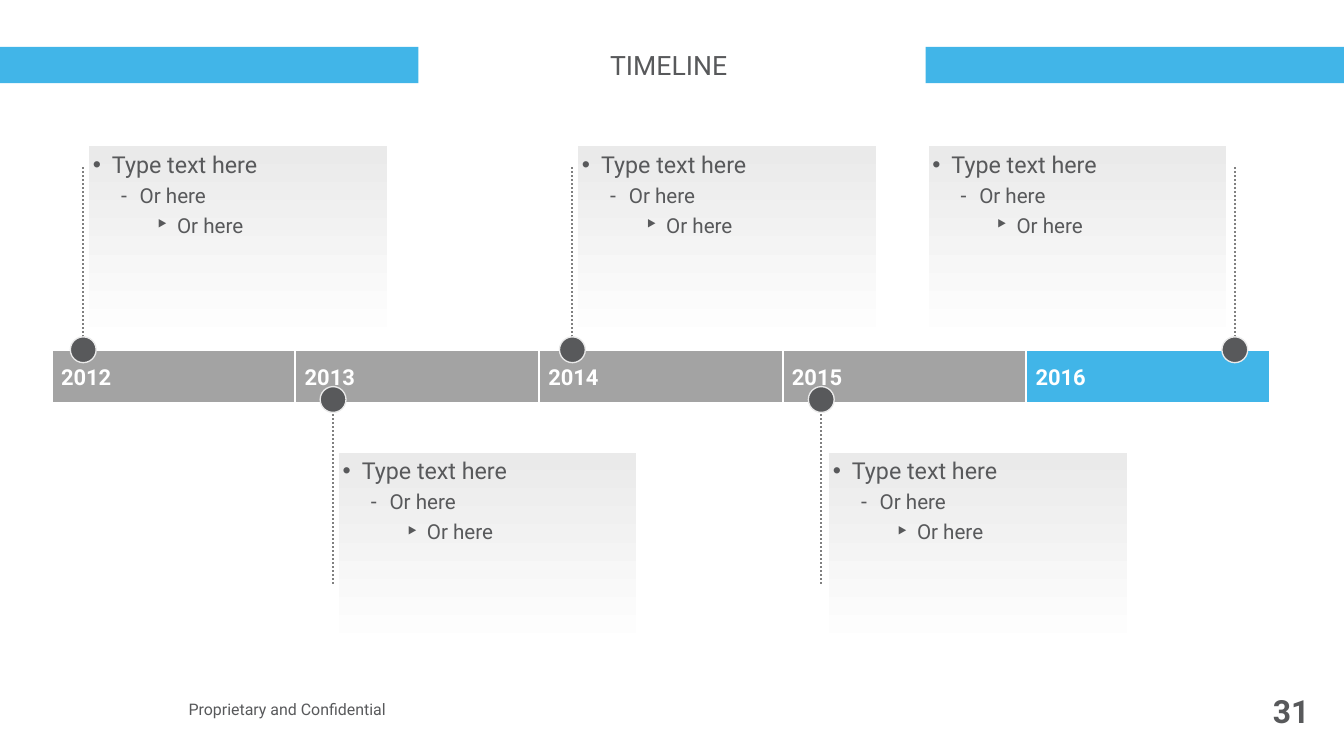
from lxml.etree import SubElement
from pptx import Presentation
from pptx.dml.color import RGBColor
from pptx.enum.dml import MSO_LINE
from pptx.enum.shapes import MSO_CONNECTOR, MSO_SHAPE
from pptx.enum.text import MSO_ANCHOR, PP_ALIGN
from pptx.oxml.ns import qn
from pptx.util import Inches, Pt

COLORS = {"blue": "41B5E8", "gray": "A3A3A3", "ink": "58595B",
          "pale": "EAEAEA", "white": "FFFFFF", "rule": "808080"}
YEARS = ["2012", "2013", "2014", "2015", "2016"]
UPPER = {"card": 1.52, "far": 1.75, "near": 3.52, "dot": 3.52}
LOWER = {"card": 4.72, "far": 6.11, "near": 4.33, "dot": 4.04}
EVENTS = [(0.87, 0.92, UPPER), (3.48, 3.53, LOWER), (5.98, 6.03, UPPER),
          (8.58, 8.65, LOWER), (12.9, 9.69, UPPER)]
CARD_WIDTH, CARD_HEIGHT, DOT = 3.13, 2.09, 0.27
LEVELS = [
    {"text": "Type text here", "size": 17.5, "before": 0, "left": 0.2,
     "hang": 0.2, "bullet": "•", "scale": 100},
    {"text": "Or here", "size": 15.5, "before": 3.7, "left": 0.49,
     "hang": 0.2, "bullet": "-", "scale": 100},
    {"text": "Or here", "size": 15.5, "before": 3.7, "left": 0.88,
     "hang": 0.21, "bullet": "‣", "scale": 140},
]


def rgb(name):
    """Return the colour with this name."""
    return RGBColor.from_string(COLORS[name])


def set_all(target, values):
    """Set every attribute listed in values on target."""
    for name, value in values.items():
        setattr(target, name, value)


def style_font(font, size, color="ink", bold=False):
    """Apply the slide's typeface to a font."""
    set_all(font, {"name": "Roboto", "size": Pt(size), "bold": bold})
    font.color.rgb = rgb(color)


def set_frame(frame, margins, anchor=MSO_ANCHOR.MIDDLE):
    """Set wrapping, anchor and the left, top, right, bottom margins."""
    sides = ("margin_left", "margin_top", "margin_right", "margin_bottom")
    set_all(frame, {"word_wrap": True, "vertical_anchor": anchor,
                    **dict(zip(sides, map(Inches, margins)))})


def write(frame, text, size, color="ink", bold=False, align=PP_ALIGN.LEFT):
    """Write one styled paragraph."""
    paragraph = frame.paragraphs[0]
    set_all(paragraph, {"text": text, "alignment": align})
    style_font(paragraph.font, size, color, bold)


def add_block(slide, kind, box, fill, line=None, width=1.5):
    """Add a preset shape with a plain fill and an optional outline."""
    block = slide.shapes.add_shape(kind, *map(Inches, box))
    block.shadow.inherit = False
    block.fill.solid()
    block.fill.fore_color.rgb = rgb(fill)
    if line:
        block.line.color.rgb = rgb(line)
        block.line.width = Pt(width)
    else:
        block.line.fill.background()
    return block


def add_label(slide, box, margin, text, size, **style):
    """Add a one-line text box."""
    frame = slide.shapes.add_textbox(*map(Inches, box)).text_frame
    set_frame(frame, [margin] * 4)
    write(frame, text, size, **style)


def add_stem(slide, x, start, end):
    """Add a dotted vertical line."""
    stem = slide.shapes.add_connector(
        MSO_CONNECTOR.STRAIGHT, *map(Inches, (x, start, x, end)))
    stem.line.color.rgb = rgb("rule")
    set_all(stem.line, {"width": Pt(1.5), "dash_style": MSO_LINE.ROUND_DOT})
    SubElement(stem.element.spPr, qn("a:effectLst"))


def add_bullets(slide, left, top):
    """Add the three-level list of an event."""
    box = map(Inches, (left, top, CARD_WIDTH, 1.03))
    frame = slide.shapes.add_textbox(*box).text_frame
    set_frame(frame, [0.05] * 4, MSO_ANCHOR.TOP)
    for number, level in enumerate(LEVELS):
        item = frame.add_paragraph() if number else frame.paragraphs[0]
        set_all(item, {"text": level["text"], "level": number})
        props = item._p.get_or_add_pPr()
        props.set("marL", str(Inches(level["left"])))
        props.set("indent", str(-Inches(level["hang"])))
        SubElement(props, qn("a:buSzPct"), val=str(level["scale"] * 1000))
        SubElement(props, qn("a:buFont"), typeface="Arial")
        SubElement(props, qn("a:buChar"), char=level["bullet"])
        item.space_before = Pt(level["before"])
        style_font(item.font, level["size"])


def add_event(slide, x, left, row):
    """Add an event: stem, fading card, list and dot."""
    add_stem(slide, x, row["near"], row["far"])
    card = add_block(slide, MSO_SHAPE.RECTANGLE,
                     (left, row["card"], CARD_WIDTH, CARD_HEIGHT),
                     "white", "white")
    card.fill.gradient()
    card.fill.gradient_angle = 270
    for stop, color in zip(card.fill.gradient_stops, ("pale", "white")):
        stop.color.rgb = rgb(color)
    add_bullets(slide, left, row["card"])
    add_block(slide, MSO_SHAPE.OVAL, (x - DOT / 2, row["dot"], DOT, DOT),
              "ink", "pale", 1)


def add_year(slide, index, year):
    """Add one year segment; the last is highlighted."""
    fill = "blue" if year == YEARS[-1] else "gray"
    box = (0.54 + index * 2.545, 3.66, 2.55, 0.55)
    segment = add_block(slide, MSO_SHAPE.RECTANGLE, box, fill, "white")
    set_frame(segment.text_frame, (0.1, 0.01, 0.01, 0.01))
    write(segment.text_frame, year, 16.5, "white", True)


def add_title(slide, text):
    """Place the title in front of the blue band."""
    add_block(slide, MSO_SHAPE.RECTANGLE, (0, 0.49, 14.04, 0.38), "blue")
    title = slide.shapes.title
    title.element.getparent().append(title.element)
    set_all(title, {"left": Inches(4.37), "top": Inches(0.41),
                    "width": Inches(5.3), "height": Inches(0.54)})
    title.fill.solid()
    title.fill.fore_color.rgb = rgb("white")
    set_frame(title.text_frame, [0.1] * 4)
    write(title.text_frame, text, 20, align=PP_ALIGN.CENTER)


def main():
    """Build the timeline slide."""
    deck = Presentation()
    set_all(deck, {"slide_width": Inches(14.04), "slide_height": Inches(7.9)})
    slide = deck.slides.add_slide(deck.slide_layouts[5])
    add_title(slide, "TIMELINE ")
    for index, year in enumerate(YEARS):
        add_year(slide, index, year)
    for event in EVENTS:
        add_event(slide, *event)
    add_label(slide, (1.93, 7.09, 3.49, 0.65), 0.04,
              "Proprietary and Confidential", 12)
    add_label(slide, (13.08, 7.22, 0.6, 0.41), 0, "31", 24,
              bold=True, align=PP_ALIGN.RIGHT)
    deck.save("out.pptx")


if __name__ == "__main__":
    main()
